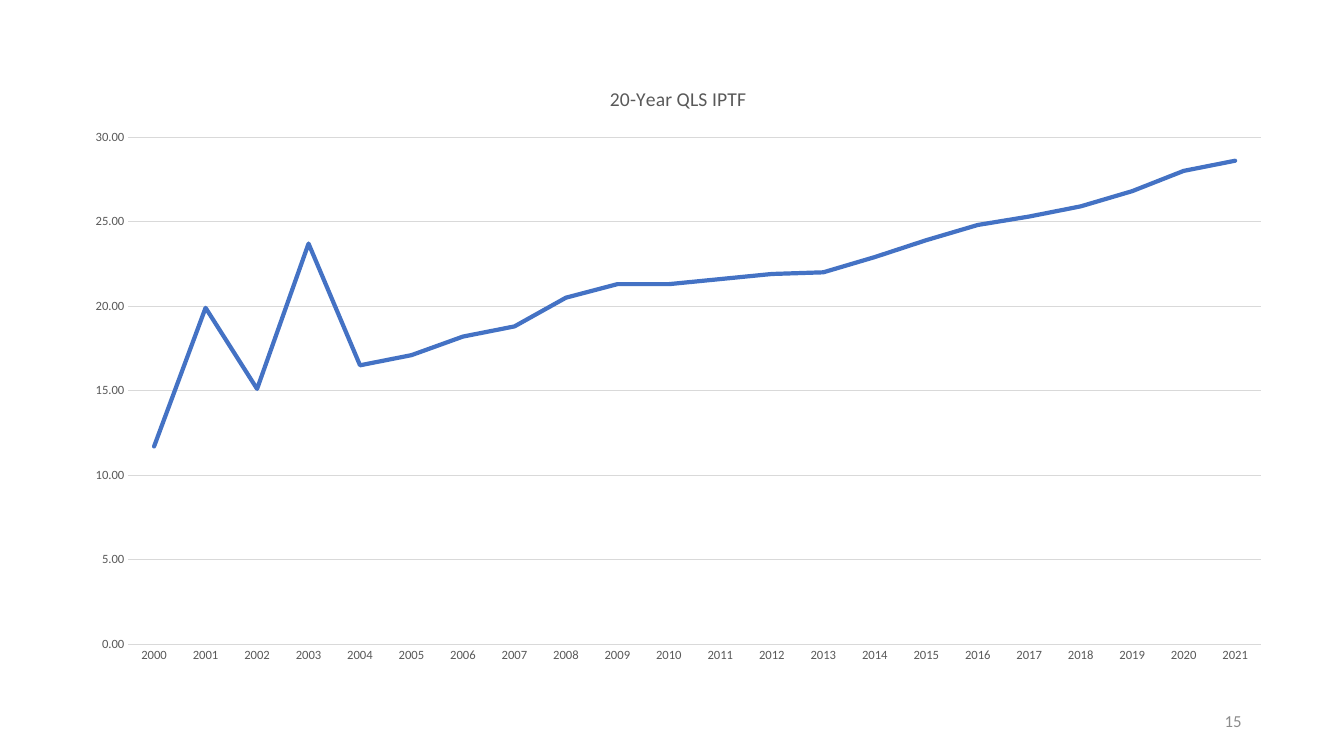
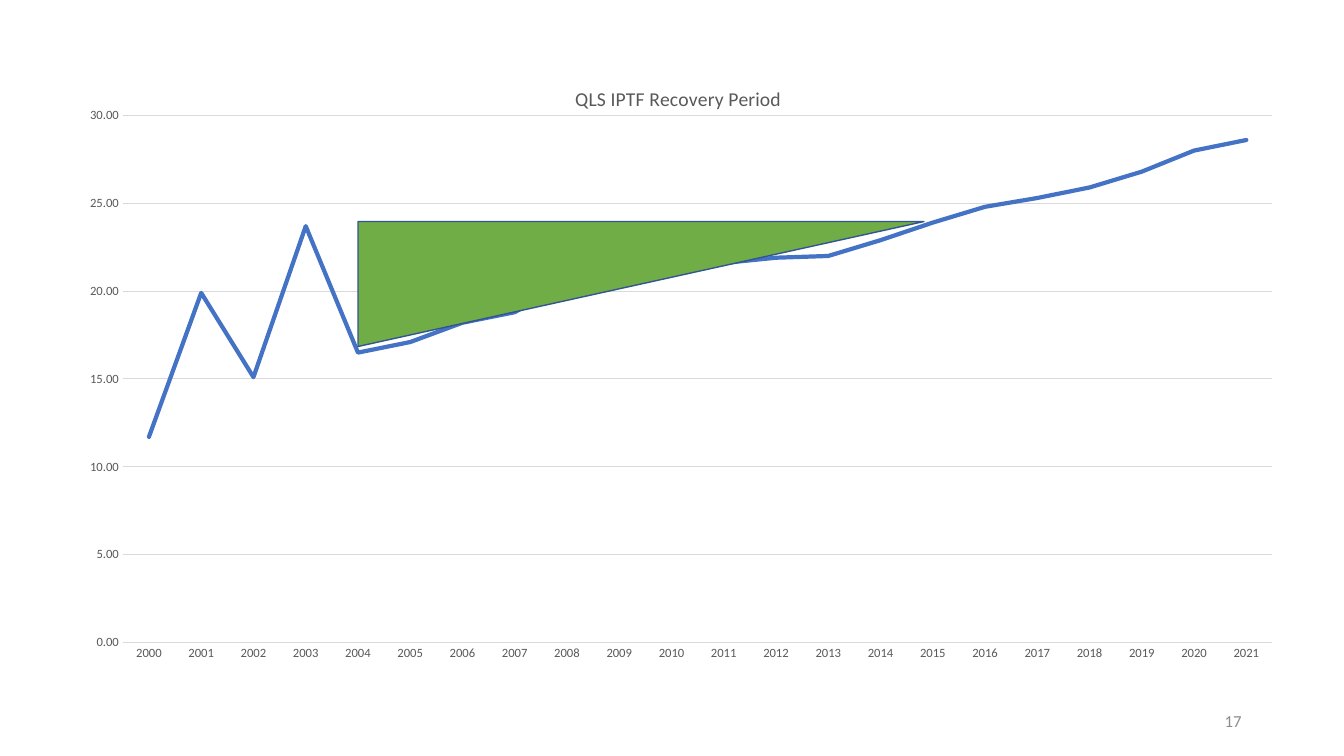
from lxml.etree import SubElement
from pptx import Presentation
from pptx.chart.data import CategoryChartData
from pptx.dml.color import RGBColor
from pptx.enum.chart import XL_CHART_TYPE as ChartType, XL_TICK_MARK as TickMark
from pptx.enum.shapes import MSO_SHAPE as Shape
from pptx.enum.text import MSO_ANCHOR as Anchor, PP_ALIGN as Align
from pptx.oxml.ns import qn
from pptx.util import Emu, Pt

# Shared content
YEARS = [str(year) for year in range(2000, 2022)]
IPTF = [11.7, 19.9, 15.1, 23.7, 16.5, 17.1, 18.2, 18.8, 20.5, 21.3, 21.3,
        21.6, 21.9, 22, 22.9, 23.9, 24.8, 25.3, 25.9, 26.8, 28, 28.6]


def px(length):
    return Emu(length * 9525)


def rgb(hex_colour):
    return RGBColor.from_string(hex_colour)


class Deck:
    FONT = "Calibri"
    TEXT, GRID, NUMBER = "595959", "D9D9D9", "8C8C8C"
    TREND, RECOVERY, OUTLINE = "4472C4", "70AD47", "325491"
    CHART_WIDTH, CHART_HEIGHT = 1156, 582

    def __init__(self):
        self.prs = Presentation()
        self.prs.slide_width, self.prs.slide_height = px(1280), px(720)
        self.slide = None

    def add_slide(self, number):
        self.slide = self.prs.slides.add_slide(self.prs.slide_layouts[6])
        self.page_number(number)

    def style_font(self, font, size, colour):
        font.name, font.size, font.bold = self.FONT, Pt(size), False
        font.color.rgb = rgb(colour)

    def style_line(self, line, colour, width):
        line.color.rgb = rgb(colour)
        line.width = Pt(width)

    def page_number(self, number):
        box = self.slide.shapes.add_textbox(px(904), px(667), px(288), px(38))
        frame = box.text_frame
        frame.word_wrap = True
        frame.vertical_anchor = Anchor.MIDDLE
        paragraph = frame.paragraphs[0]
        paragraph.alignment = Align.RIGHT
        run = paragraph.add_run()
        run.text = str(number)
        self.style_font(run.font, 12, self.NUMBER)

    def trend_chart(self, title, plot_area=None):
        data = CategoryChartData(number_format="0.00")
        data.categories = YEARS
        data.add_series("IPTF", IPTF)
        chart = self.slide.shapes.add_chart(
            ChartType.LINE, px(68), px(61),
            px(self.CHART_WIDTH), px(self.CHART_HEIGHT), data).chart
        chart.has_legend = False
        self.style_font(chart.font, 10, "000000")

        # Title
        chart.has_title = True
        run = chart.chart_title.text_frame.paragraphs[0].add_run()
        run.text = title
        self.style_font(run.font, 14, self.TEXT)
        chart.chart_title.include_in_layout = False

        # Axes
        years, values = chart.category_axis, chart.value_axis
        for axis in (years, values):
            axis.major_tick_mark = axis.minor_tick_mark = TickMark.NONE
            self.style_font(axis.tick_labels.font, 9, self.TEXT)
        self.style_line(years.format.line, self.GRID, 0.75)
        values.format.line.fill.background()
        values.minimum_scale, values.maximum_scale, values.major_unit = 0, 30, 5
        self.style_line(values.major_gridlines.format.line, self.GRID, 0.75)
        values.tick_labels.number_format = "0.00"
        values.tick_labels.number_format_is_linked = False

        # Series
        plot = chart.plots[0]
        plot.vary_by_categories = False
        trend = plot.series[0]
        trend.smooth = False
        self.style_line(trend.format.line, self.TREND, 3)
        trend.format.line._get_or_add_ln().set("cap", "rnd")
        if plot_area:
            self.place_plot(chart, *plot_area)

    def place_plot(self, chart, left, top, width, height):
        area = chart._chartSpace.find(".//" + qn("c:plotArea"))
        layout = area.find(qn("c:layout"))
        if layout is None:
            layout = SubElement(area, qn("c:layout"))
            area.insert(0, layout)
        manual = SubElement(layout, qn("c:manualLayout"))
        settings = {"layoutTarget": "inner", "xMode": "edge", "yMode": "edge",
                    "x": left / self.CHART_WIDTH, "y": top / self.CHART_HEIGHT,
                    "w": width / self.CHART_WIDTH, "h": height / self.CHART_HEIGHT}
        for tag, value in settings.items():
            SubElement(manual, qn("c:" + tag)).set("val", str(value))

    def recovery_triangle(self, left, top, width, height):
        triangle = self.slide.shapes.add_shape(
            Shape.ISOSCELES_TRIANGLE, px(left), px(top), px(width), px(height))
        triangle.adjustments[0] = 0
        triangle._element.spPr.find(qn("a:xfrm")).set("flipV", "1")
        triangle.shadow.inherit = False
        triangle.fill.solid()
        triangle.fill.fore_color.rgb = rgb(self.RECOVERY)
        self.style_line(triangle.line, self.OUTLINE, 1)


def main():
    deck = Deck()

    # Twenty-year trend
    deck.add_slide(15)
    deck.trend_chart("20-Year QLS IPTF")

    # Recovery period
    deck.add_slide(17)
    deck.trend_chart("QLS IPTF Recovery Period", plot_area=(49, 49, 1095, 502))
    deck.recovery_triangle(341, 211, 539, 119)

    deck.prs.save("out.pptx")


if __name__ == "__main__":
    main()
